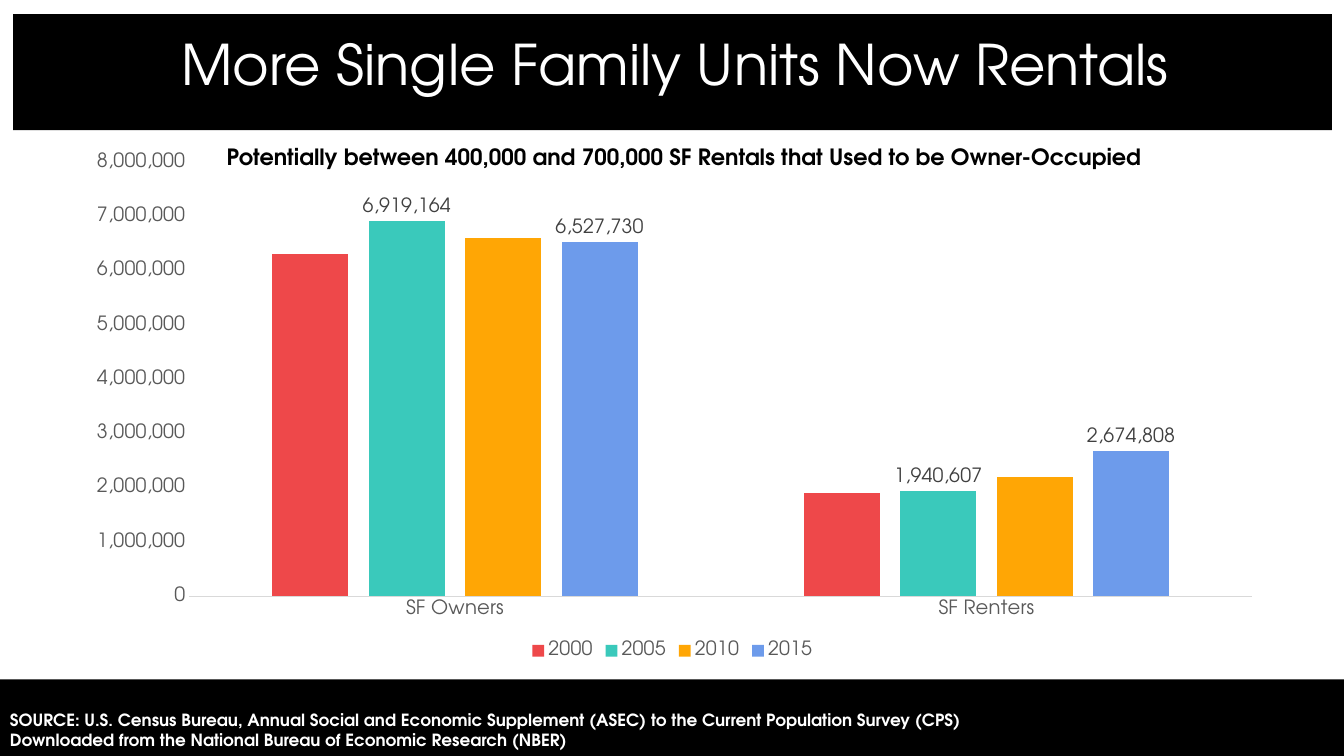
from lxml import etree
from pptx import Presentation
from pptx.chart.data import CategoryChartData
from pptx.dml.color import RGBColor
from pptx.enum import chart as ch, shapes, text
from pptx.util import Inches, Pt

TITLE = "More Single Family Units Now Rentals"
SUBTITLE = ["Potentially between 400,000 and 700,000 SF Rentals that Used to be Owner-Occupied"]
SOURCE = [
    "SOURCE: U.S. Census Bureau, Annual Social and Economic Supplement (ASEC) "
    "to the Current Population Survey (CPS)",
    "Downloaded from the National Bureau of Economic Research (NBER)",
]
CATEGORIES = ["SF Owners", "SF Renters"]
SERIES = [  # year, values, colour, labelled
    ("2000", (6300000, 1900000), "EE484A", False),
    ("2005", (6919164, 1940607), "3AC9BB", True),
    ("2010", (6600000, 2200000), "FFA605", False),
    ("2015", (6527730, 2674808), "6D9BEB", True),
]
NUMBER_FORMAT = "#,##0"

# left, top, width, height in inches
BANDS = [(0, 6.74, 13.33, 0.76), (0.13, 0.14, 13.08, 1.15)]
TITLE_AREA = (1.7, 0.33, 11.37, 0.67)
CHART_AREA = (0.68, 1.4, 11.98, 5.19)
SUBTITLE_AREA = (2.15, 1.37, 9.38, 0.37)
SOURCE_AREA = (0, 6.99, 9.72, 0.51)
# fractions of the chart area
PLOT_AREA = {"x": 0.1, "y": 0.04, "w": 0.88, "h": 0.83}


class Theme:
    font = "TeX Gyre Adventor"
    band = ink = "000000"
    paper = "FFFFFF"
    axis_text = "595959"
    label_text = "404040"
    axis_line = "D9D9D9"
    title, subtitle, chart, source = 40, 16, 14, 12


def rgb(value):
    return RGBColor.from_string(value)


def place(area):
    return [Inches(value) for value in area]


def style(font, size, color, bold=False):
    for name, value in {"name": Theme.font, "size": Pt(size), "bold": bold}.items():
        setattr(font, name, value)
    font.color.rgb = rgb(color)


def add_band(page, area):
    band = page.shapes.add_shape(shapes.MSO_SHAPE.RECTANGLE, *place(area))
    band.shadow.inherit = False
    band.fill.solid()
    band.fill.fore_color.rgb = rgb(Theme.band)
    band.line.fill.background()


def add_lines(page, area, lines, size, color):
    frame = page.shapes.add_textbox(*place(area)).text_frame
    frame.word_wrap = True
    frame.text = "\n".join(lines)
    for para in frame.paragraphs:
        style(para.font, size, color, bold=True)


def set_title(page):
    title = page.shapes.title
    page.shapes._spTree.append(title._element)  # bring in front of the band
    title.left, title.top, title.width, title.height = place(TITLE_AREA)
    frame = title.text_frame
    frame.text = TITLE
    frame.vertical_anchor = text.MSO_ANCHOR.MIDDLE
    frame.auto_size = text.MSO_AUTO_SIZE.NONE
    para = frame.paragraphs[0]
    para.alignment = text.PP_ALIGN.LEFT
    para.line_spacing = 0.9
    style(para.font, Theme.title, Theme.paper)


def fix_plot_area(chart):
    """Pin the inner plot area to the fractions in PLOT_AREA."""
    plot_area = chart._chartSpace.chart.plotArea
    space = "{" + etree.QName(plot_area).namespace + "}"
    for old in plot_area.findall(space + "layout"):
        plot_area.remove(old)
    layout = etree.Element(space + "layout")
    manual = etree.SubElement(layout, space + "manualLayout")
    settings = {"layoutTarget": "inner", "xMode": "edge", "yMode": "edge", **PLOT_AREA}
    for name, value in settings.items():
        etree.SubElement(manual, space + name).set("val", str(value))
    plot_area.insert(0, layout)


def style_axes(chart):
    for axis in (chart.category_axis, chart.value_axis):
        axis.has_major_gridlines = False
        axis.major_tick_mark = axis.minor_tick_mark = ch.XL_TICK_MARK.NONE
        style(axis.tick_labels.font, Theme.chart, Theme.axis_text)
    line = chart.category_axis.format.line
    line.color.rgb = rgb(Theme.axis_line)
    line.width = Pt(0.75)
    values = chart.value_axis
    values.format.line.fill.background()
    values.minimum_scale, values.maximum_scale, values.major_unit = 0, 8000000, 1000000
    values.tick_labels.number_format = NUMBER_FORMAT
    values.tick_labels.number_format_is_linked = False


def add_unit_chart(page):
    data = CategoryChartData(number_format=NUMBER_FORMAT)
    data.categories = CATEGORIES
    for year, values, _, _ in SERIES:
        data.add_series(year, values)
    kind = ch.XL_CHART_TYPE.COLUMN_CLUSTERED
    chart = page.shapes.add_chart(kind, *place(CHART_AREA), data).chart
    style(chart.font, Theme.chart, Theme.ink)
    chart.has_title = False
    chart.has_legend = True
    chart.legend.position = ch.XL_LEGEND_POSITION.BOTTOM
    chart.legend.include_in_layout = False
    style(chart.legend.font, Theme.chart, Theme.axis_text)
    style_axes(chart)
    fix_plot_area(chart)

    plot = chart.plots[0]
    plot.gap_width, plot.overlap, plot.vary_by_categories = 219, -27, False
    for series, (_, _, color, labelled) in zip(plot.series, SERIES):
        series.format.fill.solid()
        series.format.fill.fore_color.rgb = rgb(color)
        if labelled:
            labels = series.data_labels
            labels.show_value = True
            labels.number_format = NUMBER_FORMAT
            labels.number_format_is_linked = False
            labels.position = ch.XL_LABEL_POSITION.OUTSIDE_END
            style(labels.font, Theme.chart, Theme.label_text)


def main():
    deck = Presentation()
    deck.slide_width, deck.slide_height = Inches(13.33), Inches(7.5)
    page = deck.slides.add_slide(deck.slide_layouts[5])
    for area in BANDS:
        add_band(page, area)
    add_unit_chart(page)
    set_title(page)
    add_lines(page, SOURCE_AREA, SOURCE, Theme.source, Theme.paper)
    add_lines(page, SUBTITLE_AREA, SUBTITLE, Theme.subtitle, Theme.ink)
    deck.save("out.pptx")


if __name__ == "__main__":
    main()
